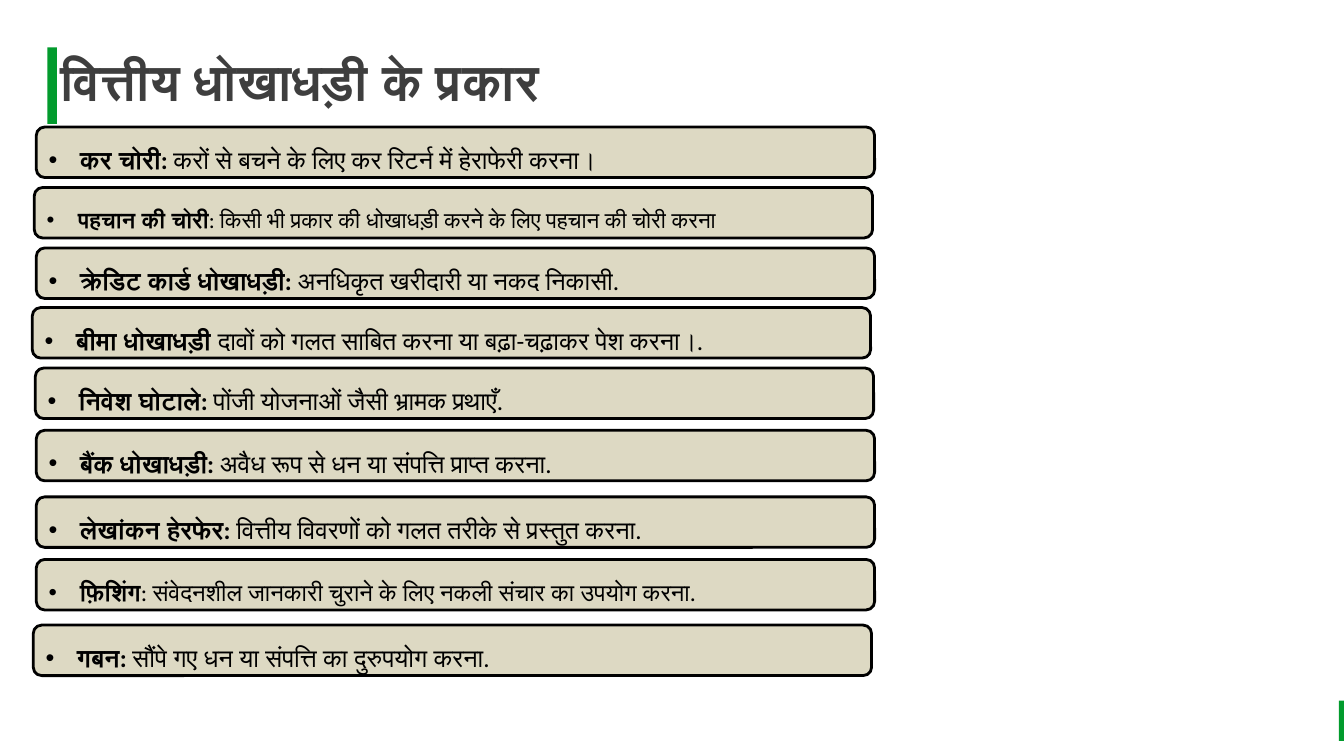
from lxml.etree import SubElement
from pptx import Presentation
from pptx.dml.color import RGBColor
from pptx.enum.shapes import MSO_SHAPE as Shape
from pptx.enum.text import MSO_ANCHOR as Anchor, PP_ALIGN as Align
from pptx.oxml.ns import qn
from pptx.util import Inches, Pt

COLOURS = {"green": "029B2D", "title": "3E3E3E", "sand": "DDD9C3", "ink": "000000"}
WIDTH, HEIGHT = Inches(13.33), Inches(7.5)
COLUMNS, ROWS = 40, 25
CARD_COLUMNS, CARD_ROWS = 24.95, 1.67

FRAUDS = [
    (1.08, 4.2, 18, "कर चोरी: ", "करों से बचने के लिए कर रिटर्न में हेराफेरी करना।"),
    (1.02, 6.2, 16, "पहचान की चोरी", ": किसी भी प्रकार की धोखाधड़ी करने के लिए पहचान की चोरी करना"),
    (1.08, 8.2, 18, "क्रेडिट कार्ड धोखाधड़ी: ", "अनधिकृत खरीदारी या नकद निकासी."),
    (0.96, 10.17, 18, "बीमा धोखाधड़ी ", "दावों को गलत साबित करना या बढ़ा-चढ़ाकर पेश करना।."),
    (1.05, 12.17, 18, "निवेश घोटाले: ", "पोंजी योजनाओं जैसी भ्रामक प्रथाएँ."),
    (1.08, 14.23, 18, "बैंक धोखाधड़ी: ", "अवैध रूप से धन या संपत्ति प्राप्त करना."),
    (1.08, 16.43, 18, "लेखांकन हेरफेर: ", "वित्तीय विवरणों को गलत तरीके से प्रस्तुत करना."),
    (1.08, 18.5, 17, "फ़िशिंग", ": संवेदनशील जानकारी चुराने के लिए नकली संचार का उपयोग करना."),
    (0.99, 20.67, 18, "गबन: ", "सौंपे गए धन या संपत्ति का दुरुपयोग करना."),
]


def colour(name):
    return RGBColor.from_string(COLOURS[name])


def grid(column, row, columns, rows):
    across, down = WIDTH / COLUMNS, HEIGHT / ROWS
    return [int(n) for n in (column * across, row * down, columns * across, rows * down)]


def apply(target, values):
    for name, value in values.items():
        setattr(target, name, value)


def add_span(para, text, ink, **font):
    span = para.add_run()
    span.text = text
    apply(span.font, font)
    span.font.color.rgb = colour(ink)


def add_block(page, kind, place, fill):
    block = page.shapes.add_shape(kind, *grid(*place))
    block.shadow.inherit = False
    block.fill.solid()
    block.fill.fore_color.rgb = colour(fill)
    block.line.fill.background()
    return block


def add_title(page, text):
    frame = page.shapes.add_textbox(*grid(1.8, 1.67, 37.68, 2.03)).text_frame
    apply(frame, {"word_wrap": True, "margin_left": 0, "margin_top": 0,
                  "margin_right": 0, "margin_bottom": 0})
    add_span(frame.paragraphs[0], text, "title",
             name="Times New Roman", size=Pt(36), bold=True)


def add_bullet(para):
    layout = para._p.get_or_add_pPr()
    indent = Inches(0.31)
    layout.set("marL", str(indent))
    layout.set("indent", str(-indent))
    SubElement(layout, qn("a:buFont"), typeface="Arial")
    SubElement(layout, qn("a:buChar"), char="•")


def add_card(page, column, row, size, term, meaning):
    card = add_block(page, Shape.ROUNDED_RECTANGLE,
                     (column, row, CARD_COLUMNS, CARD_ROWS), "sand")
    card.line.color.rgb = colour("ink")
    card.line.width = Pt(2)
    apply(card.text_frame, {"word_wrap": True, "vertical_anchor": Anchor.MIDDLE})
    para = card.text_frame.paragraphs[0]
    apply(para, {"alignment": Align.JUSTIFY, "line_spacing": 1.5})
    add_bullet(para)
    for text, bold in ((term, True), (meaning, False)):
        add_span(para, text, "ink", name="Calibri", size=Pt(size), bold=bold)


def main():
    deck = Presentation()
    apply(deck, {"slide_width": WIDTH, "slide_height": HEIGHT})
    page = deck.slides.add_slide(deck.slide_layouts[6])
    for place in ((39.85, 23.17, 0.15, 1.33), (1.41, 1.57, 0.28, 2.53)):
        add_block(page, Shape.RECTANGLE, place, "green")
    add_title(page, "वित्तीय धोखाधड़ी के प्रकार")
    for fraud in FRAUDS:
        add_card(page, *fraud)
    deck.save("out.pptx")


if __name__ == "__main__":
    main()
